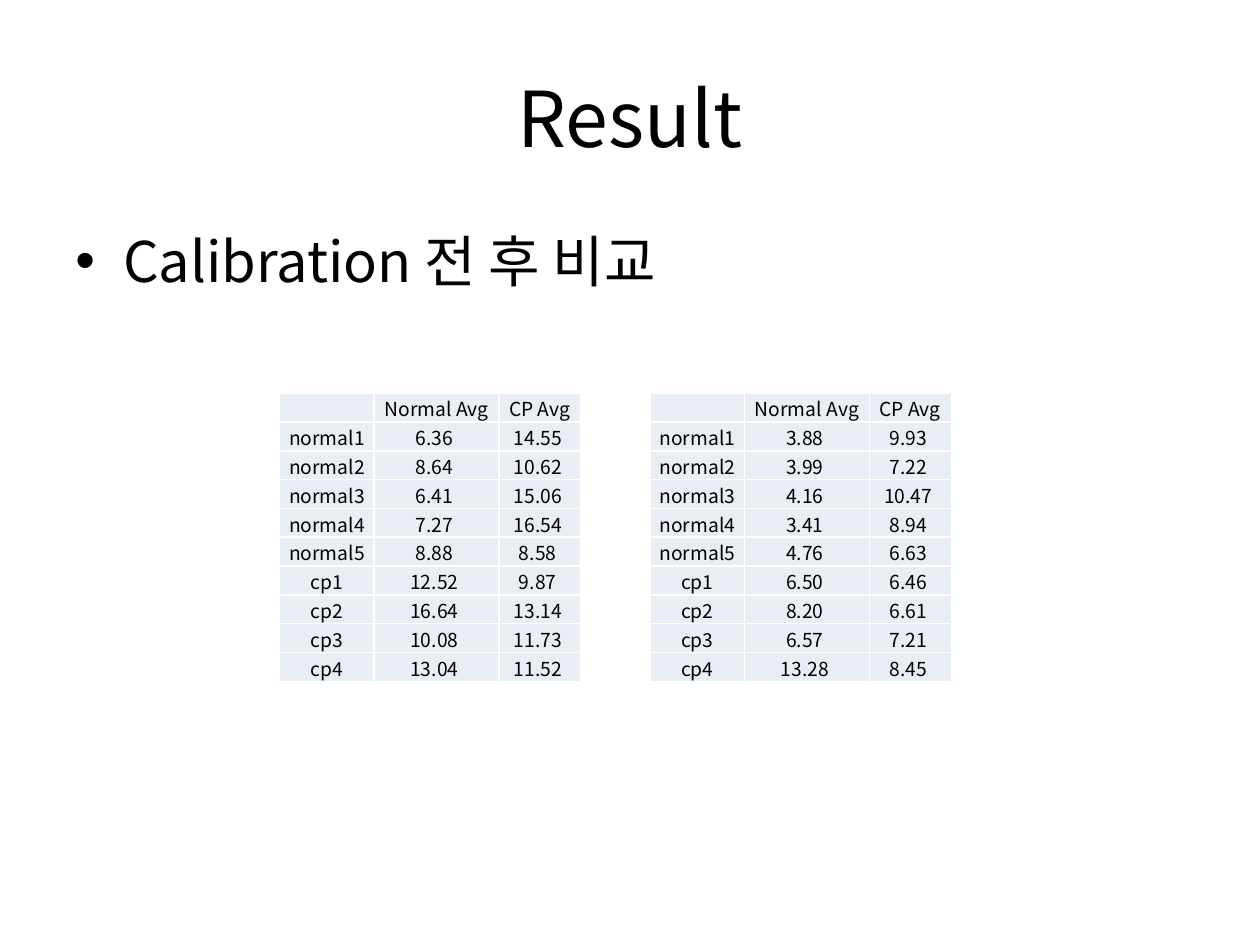
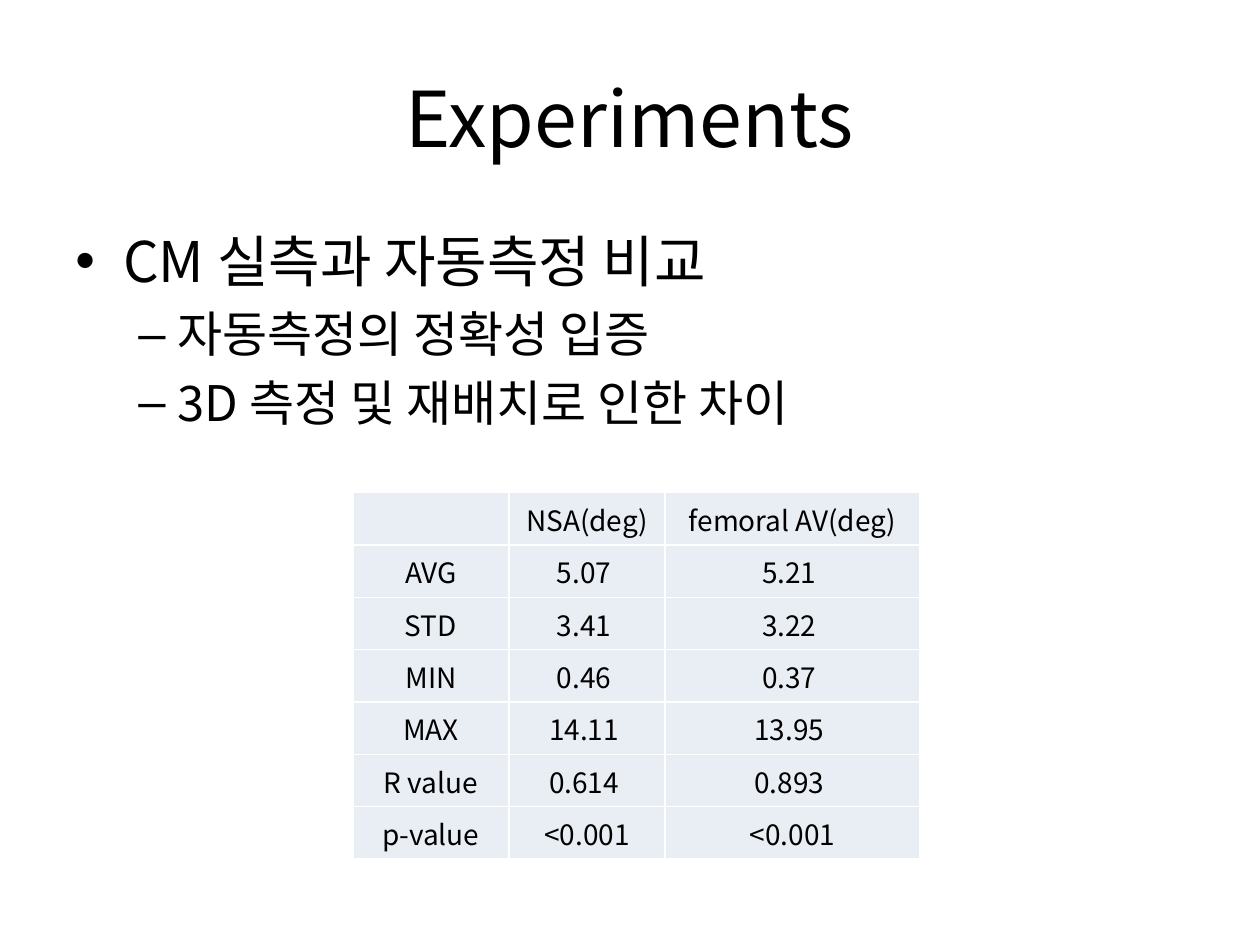
from dataclasses import dataclass

from lxml import etree
from pptx import Presentation
from pptx.dml.color import RGBColor
from pptx.enum.text import MSO_ANCHOR, PP_ALIGN
from pptx.oxml.ns import qn
from pptx.util import Emu, Pt

CENTER = PP_ALIGN.CENTER
MIDDLE = MSO_ANCHOR.MIDDLE
TITLE_ONLY = 5

# Shared look; 100 px make an inch
SCALE = 9144
FACE = "Noto Sans CJK KR"
HUES = {"ink": "000000", "cell": "E9EDF4", "rule": "FFFFFF"}
TITLE_BOX = (50, 30, 900, 125)
BODY_BOX = (50, 175, 900, 495)
TITLE_SIZE = 44


@dataclass(frozen=True)
class Level:
    mark: str
    size: int
    left: int
    hang: int


LEVELS = (Level("•", 32, 38, 38), Level("–", 28, 81, 31))


@dataclass(frozen=True)
class Point:
    text: str
    level: int = 0


@dataclass(frozen=True)
class Grid:
    left: int
    top: int
    height: int
    cols: tuple[int, ...]
    size: int
    rows: tuple[tuple[str, ...], ...]


@dataclass(frozen=True)
class Page:
    title: str
    points: tuple[Point, ...]
    grids: tuple[Grid, ...]


def px(count: int) -> Emu:
    return Emu(count * SCALE)


def style(para, size: int) -> None:
    """Give a paragraph the shared face and ink."""
    font = para.font
    font.size = Pt(size)
    font.name = FACE
    font.color.rgb = RGBColor.from_string(HUES["ink"])
    props = para._p.pPr.find(qn("a:defRPr"))
    etree.SubElement(props, qn("a:ea"), typeface=FACE)


def add_title(slide, text: str) -> None:
    title = slide.shapes.title
    title.left, title.top, title.width, title.height = map(px, TITLE_BOX)
    frame = title.text_frame
    frame.text = text
    frame.vertical_anchor = MIDDLE
    para = frame.paragraphs[0]
    para.alignment = CENTER
    style(para, TITLE_SIZE)


def add_points(slide, points: tuple[Point, ...]) -> None:
    frame = slide.shapes.add_textbox(*map(px, BODY_BOX)).text_frame
    frame.word_wrap = True
    for i, point in enumerate(points):
        para = frame.add_paragraph() if i else frame.paragraphs[0]
        level = LEVELS[point.level]
        para.text = point.text
        para.level = point.level
        para.space_before = Pt(level.size * 0.2)
        props = para._p.get_or_add_pPr()
        props.set("marL", str(px(level.left)))
        props.set("indent", str(px(-level.hang)))
        etree.SubElement(props, qn("a:buFont"), typeface="Arial")
        etree.SubElement(props, qn("a:buChar"), char=level.mark)
        style(para, level.size)


def add_rules(cell) -> None:
    """Draw a thin line on all four sides of a cell."""
    props = cell._tc.get_or_add_tcPr()
    for side in ("lnL", "lnR", "lnT", "lnB"):
        line = etree.SubElement(props, qn(f"a:{side}"), w=str(Pt(1)))
        fill = etree.SubElement(line, qn("a:solidFill"))
        etree.SubElement(fill, qn("a:srgbClr"), val=HUES["rule"])


def fill_cell(cell, text: str, size: int) -> None:
    add_rules(cell)
    cell.fill.solid()
    cell.fill.fore_color.rgb = RGBColor.from_string(HUES["cell"])
    cell.margin_left = cell.margin_right = cell.margin_top = px(1)
    cell.margin_bottom = 0
    cell.vertical_anchor = MIDDLE
    # Numbers keep a trailing space for the sign column
    cell.text = f"{text} " if text[:1].isdigit() else text
    para = cell.text_frame.paragraphs[0]
    para.alignment = CENTER
    style(para, size)
    if not text:
        etree.SubElement(para._p, qn("a:endParaRPr"), sz=str(size * 100))


def add_grid(slide, grid: Grid) -> None:
    box = map(px, (grid.left, grid.top, sum(grid.cols), grid.height))
    table = slide.shapes.add_table(len(grid.rows), len(grid.cols), *box).table
    table.first_row = table.horz_banding = False
    for col, width in zip(table.columns, grid.cols):
        col.width = px(width)
    for row, texts in zip(table.rows, grid.rows):
        row.height = px(grid.height) // len(grid.rows)
        for cell, text in zip(row.cells, texts):
            fill_cell(cell, text, grid.size)


# Content
NAMES = ("normal1", "normal2", "normal3", "normal4", "normal5",
         "cp1", "cp2", "cp3", "cp4")
BEFORE = (
    ("6.36", "8.64", "6.41", "7.27", "8.88", "12.52", "16.64", "10.08", "13.04"),
    ("14.55", "10.62", "15.06", "16.54", "8.58", "9.87", "13.14", "11.73", "11.52"),
)
AFTER = (
    ("3.88", "3.99", "4.16", "3.41", "4.76", "6.50", "8.20", "6.57", "13.28"),
    ("9.93", "7.22", "10.47", "8.94", "6.63", "6.46", "6.61", "7.21", "8.45"),
)


def mean_grid(left: int, means: tuple[tuple[str, ...], ...]) -> Grid:
    rows = (("", "Normal Avg", "CP Avg"), *zip(NAMES, *means))
    return Grid(left, 312, 229, (75, 99, 65), 11, rows)


ERRORS = Grid(280, 391, 291, (124, 124, 202), 16, (
    ("", "NSA(deg)", "femoral AV(deg)"),
    ("AVG", "5.07", "5.21"),
    ("STD", "3.41", "3.22"),
    ("MIN", "0.46", "0.37"),
    ("MAX", "14.11", "13.95"),
    ("R value", "0.614", "0.893"),
    ("p-value", "<0.001", "<0.001"),
))

PAGES = (
    Page("Result",
         (Point("Calibration 전 후 비교"),),
         (mean_grid(222, BEFORE), mean_grid(516, AFTER))),
    Page("Experiments",
         (Point("CM 실측과 자동측정 비교"),
          Point("자동측정의 정확성 입증", 1),
          Point("3D 측정 및 재배치로 인한 차이", 1)),
         (ERRORS,)),
)


def main() -> None:
    deck = Presentation()
    deck.slide_width, deck.slide_height = px(1000), px(750)
    for page in PAGES:
        slide = deck.slides.add_slide(deck.slide_layouts[TITLE_ONLY])
        add_title(slide, page.title)
        add_points(slide, page.points)
        for grid in page.grids:
            add_grid(slide, grid)
    deck.save("out.pptx")


if __name__ == "__main__":
    main()
